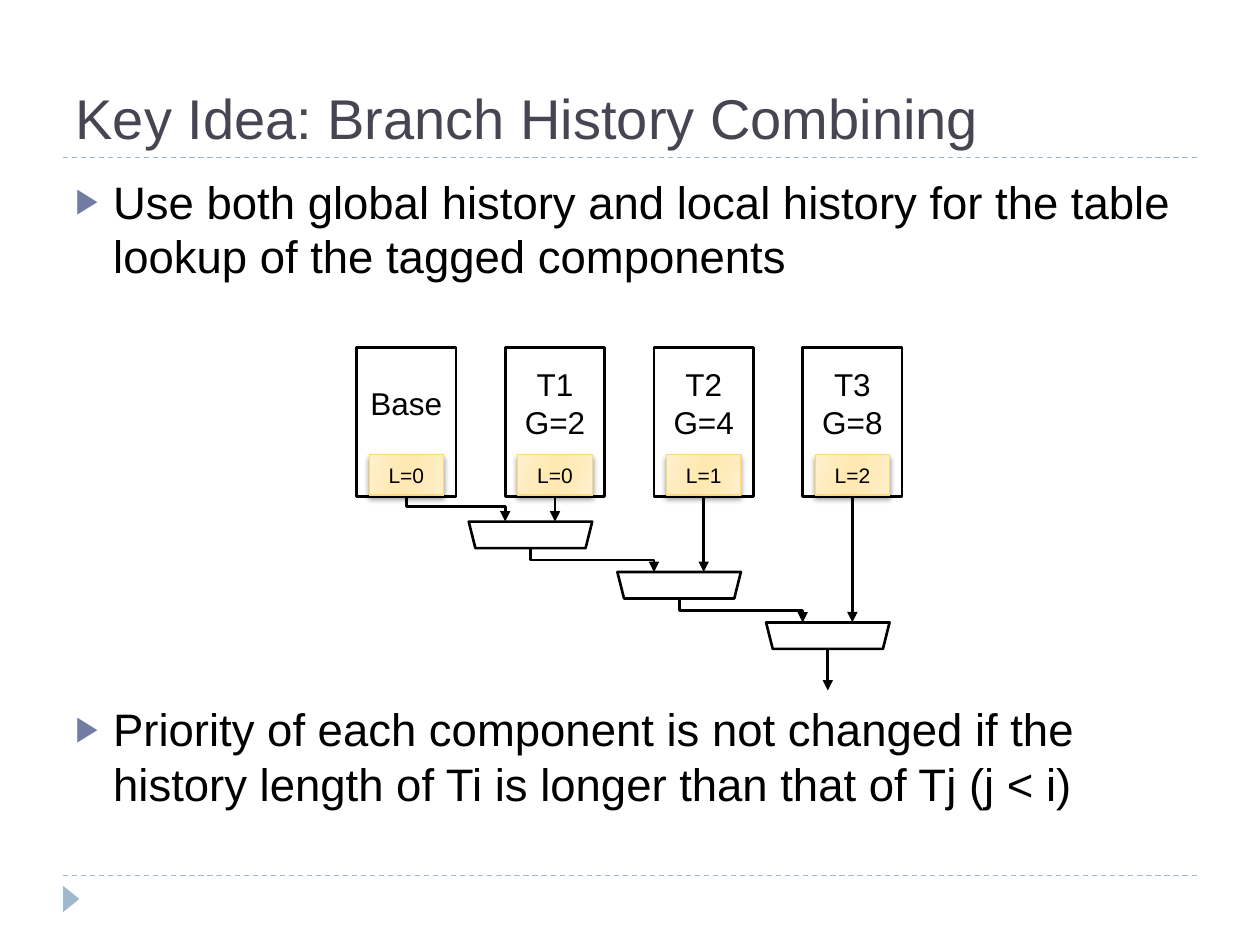
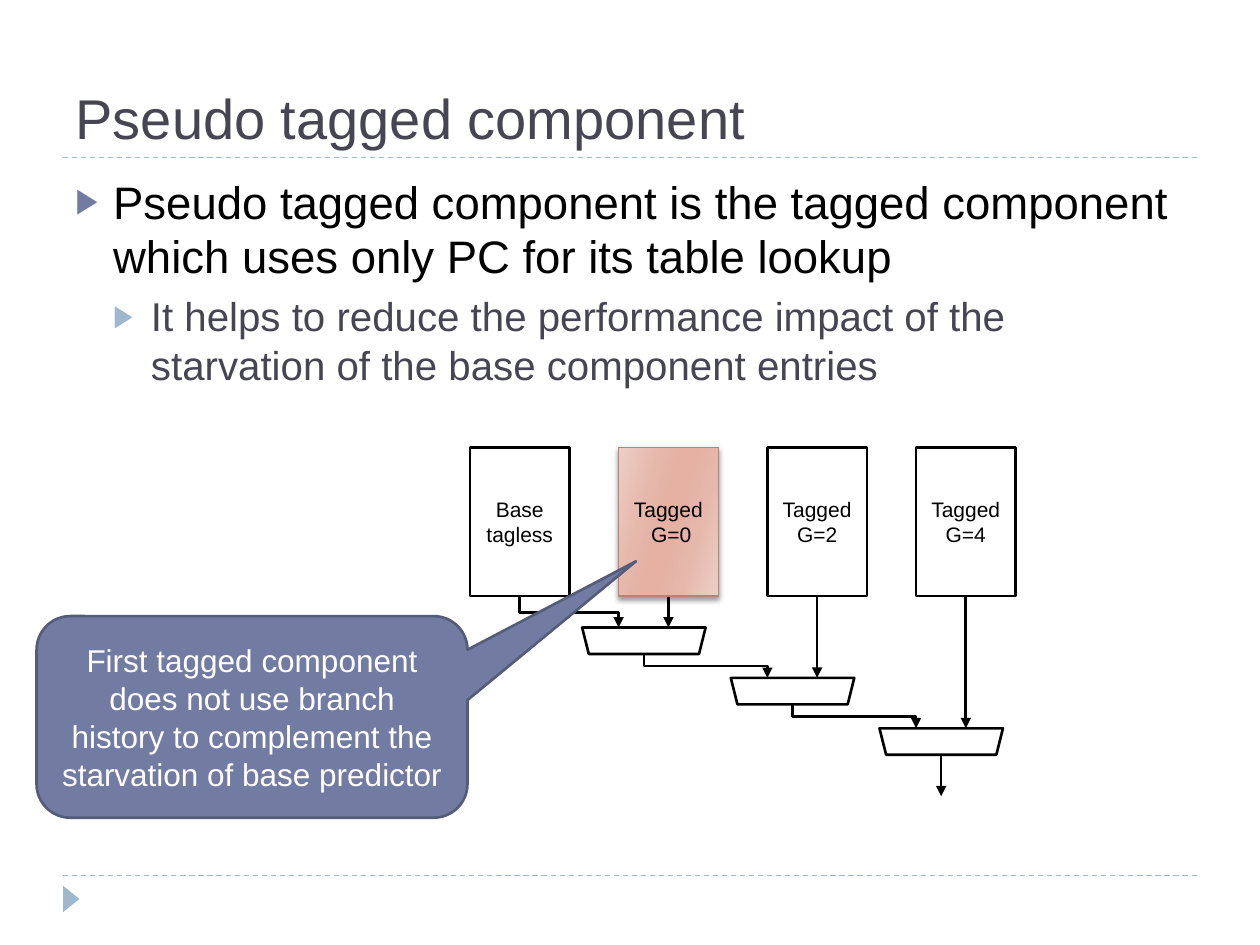
from pptx import Presentation
from pptx.dml.color import RGBColor
from pptx.enum import dml, shapes, text
from pptx.oxml import parse_xml
from pptx.oxml.ns import nsdecls, qn
from pptx.util import Inches, Pt

COLOURS = {
    "ink": "000000", "paper": "FFFFFF", "heading": "464653",
    "accent": "727CA3", "accent_edge": "545C79", "pale": "9FB8CD",
    "yellow_edge": "FADA7A", "red_edge": "B88472",
}
# Outer, middle and inner colours of a mirrored gradient
GRADIENTS = {
    "yellow": ("FFF0CF", "FFEBBA", "FFE9B3"),
    "red": ("ECCEC6", "E6B8AC", "E4B1A3"),
}
GRADIENT_STOPS = (0, 30, 45, 55, 73, 100)
FONT = "Arial"
# Per bullet level: size, text colour, bullet colour, space before
BULLET_LEVELS = (
    (26, "ink", "accent", 6),
    (23, "heading", "pale", 5),
)

TABLE_WIDTH, TABLE_HEIGHT, TABLE_PITCH = 0.79, 1.18, 1.18
MUX_WIDTH, MUX_HEIGHT, MUX_STEP, MUX_OVERHANG = 0.98, 0.21, 0.4, 0.29
FIRST_ARROW, LAST_ARROW = 0.24, 0.33
CHIP_WIDTH, CHIP_HEIGHT = 0.59, 0.32


def rgb(name):
    return RGBColor.from_string(COLOURS[name])


class Deck:
    """Holds the shared style and the slide being drawn."""

    def __init__(self):
        self.presentation = Presentation()
        self.presentation.slide_width = Inches(10)
        self.presentation.slide_height = Inches(7.5)
        self.slide = None

    def start_slide(self, title):
        self.slide = self.presentation.slides.add_slide(self.presentation.slide_layouts[5])
        for y in (6.95, 1.25):
            rule = self.line((0.5, y), (9.5, y), "pale", 0.75)
            rule.line.dash_style = dml.MSO_LINE.DASH
        marker = self.shape(shapes.MSO_SHAPE.ISOSCELES_TRIANGLE, (0.46, 7.07, 0.21, 0.13),
                            fill="pale", edge=None)
        marker.rotation = 90
        heading = self.slide.shapes.title
        heading.left, heading.top, heading.width, heading.height = map(Inches, (0.5, 0.17, 9, 1.08))
        frame = heading.text_frame
        frame.text = title
        frame.auto_size = text.MSO_AUTO_SIZE.NONE
        frame.vertical_anchor = text.MSO_ANCHOR.BOTTOM
        self.style(frame.paragraphs[0], 32, "heading", text.PP_ALIGN.LEFT)

    def style(self, paragraph, size, colour, alignment):
        paragraph.alignment = alignment
        for run in paragraph.runs:
            run.font.name = FONT
            run.font.size = Pt(size)
            run.font.color.rgb = rgb(colour)

    def bullets(self, items):
        """Items are (level, wording, extra space before in points)."""
        box = self.slide.shapes.add_textbox(*map(Inches, (0.5, 1.33, 9, 5.4)))
        frame = box.text_frame
        frame.word_wrap = True
        for index, (level, wording, gap) in enumerate(items):
            paragraph = frame.paragraphs[0] if index == 0 else frame.add_paragraph()
            paragraph.text = wording
            size, colour, bullet_colour, space = BULLET_LEVELS[level]
            self.style(paragraph, size, colour, text.PP_ALIGN.LEFT)
            paragraph.level = level
            paragraph.space_before = Pt(space + gap)
            properties = paragraph._p.get_or_add_pPr()
            properties.set("marL", str(Inches(0.3 * (level + 1))))
            properties.set("indent", str(-Inches(0.3)))
            for bullet in (
                f'<a:buClr {nsdecls("a")}><a:srgbClr val="{COLOURS[bullet_colour]}"/></a:buClr>',
                f'<a:buSzPct {nsdecls("a")} val="76000"/>',
                f'<a:buFont {nsdecls("a")} typeface="{FONT}"/>',
                f'<a:buChar {nsdecls("a")} char="▶"/>',
            ):
                properties.append(parse_xml(bullet))

    def shape(self, kind, place, fill="paper", edge="ink", edge_width=1.5):
        shape = self.slide.shapes.add_shape(kind, *map(Inches, place))
        shape.shadow.inherit = False
        if fill in GRADIENTS:
            self.shade(shape, GRADIENTS[fill])
        else:
            shape.fill.solid()
            shape.fill.fore_color.rgb = rgb(fill)
        if edge:
            shape.line.color.rgb = rgb(edge)
            shape.line.width = Pt(edge_width)
        else:
            shape.line.fill.background()
        return shape

    def shade(self, shape, tones):
        """Give a shape a mirrored gradient and a soft shadow below."""
        stops = "".join(
            f'<a:gs pos="{stop * 1000}"><a:srgbClr val="{tone}"/></a:gs>'
            for stop, tone in zip(GRADIENT_STOPS, tones + tones[::-1]))
        properties = shape.element.spPr
        properties.find(qn("a:prstGeom")).addnext(parse_xml(
            f'<a:gradFill {nsdecls("a")} rotWithShape="1"><a:gsLst>{stops}</a:gsLst>'
            f'<a:lin ang="{16 * 60000}" scaled="0"/></a:gradFill>'))
        properties.find(qn("a:effectLst")).append(parse_xml(
            f'<a:outerShdw {nsdecls("a")} blurRad="{Pt(3)}" dist="{Pt(2)}" dir="5400000" '
            f'rotWithShape="0"><a:srgbClr val="{COLOURS["ink"]}"><a:alpha val="40000"/>'
            '</a:srgbClr></a:outerShdw>'))

    def label(self, shape, wording, size, colour="ink", side=0.05, bottom=0.05):
        frame = shape.text_frame
        frame.word_wrap = True
        frame.margin_left = frame.margin_right = Inches(side)
        frame.margin_bottom = Inches(bottom)
        frame.vertical_anchor = text.MSO_ANCHOR.MIDDLE
        frame.text = wording
        for paragraph in frame.paragraphs:
            self.style(paragraph, size, colour, text.PP_ALIGN.CENTER)

    def line(self, start, end, colour="ink", width=1.5, kind=shapes.MSO_CONNECTOR.STRAIGHT):
        connector = self.slide.shapes.add_connector(kind, *map(Inches, start + end))
        connector.line.color.rgb = rgb(colour)
        connector.line.width = Pt(width)
        connector.element.spPr.append(parse_xml(f'<a:effectLst {nsdecls("a")}/>'))
        return connector

    def arrow(self, start, end):
        """Draw an arrow down, with a bend halfway where the ends are not in line."""
        if start[0] == end[0]:
            connector = self.line(start, end)
        else:
            across, down = end[0] - start[0], end[1] - start[1]
            left = (start[0] + end[0] - down) / 2
            top = (start[1] + end[1] - across) / 2
            connector = self.line((left, top), (left + down, top + across),
                                  kind=shapes.MSO_CONNECTOR.ELBOW)
            frame = connector.element.spPr.find(qn("a:xfrm"))
            frame.set("rot", str(270 * 60000))
            frame.set("flipH", "1")
        connector.line._get_or_add_ln().append(
            parse_xml(f'<a:tailEnd {nsdecls("a")} type="triangle"/>'))

    def predictor(self, left, top, mux_top, labels, size, bottom=0.05, chips=(), highlight=None):
        """Draw the row of tables and the chain of multiplexers that picks one."""
        lefts = [left + TABLE_PITCH * column for column in range(len(labels))]
        for column, (x, wording) in enumerate(zip(lefts, labels)):
            look = ("red", "red_edge", 0.75) if column == highlight else ()
            table = self.shape(shapes.MSO_SHAPE.RECTANGLE,
                               (x, top, TABLE_WIDTH, TABLE_HEIGHT), *look)
            self.label(table, wording, size, bottom=bottom)

        outlet = mux_top - FIRST_ARROW
        source = (left + TABLE_WIDTH / 2, outlet)
        for step, x in enumerate(lefts[1:]):
            y = mux_top + MUX_STEP * step
            mux_left = x - MUX_OVERHANG
            mux = self.shape(shapes.MSO_SHAPE.TRAPEZOID, (mux_left, y, MUX_WIDTH, MUX_HEIGHT))
            mux.rotation = 180
            self.arrow(source, (x, y))
            middle = x + TABLE_WIDTH / 2
            self.arrow((middle, outlet), (middle, y))
            source = (mux_left + MUX_WIDTH / 2, y + MUX_HEIGHT)
        self.arrow(source, (source[0], source[1] + LAST_ARROW))

        for x, wording in zip(lefts, chips):
            chip = self.shape(
                shapes.MSO_SHAPE.RECTANGLE,
                (x + (TABLE_WIDTH - CHIP_WIDTH) / 2, top + 0.85, CHIP_WIDTH, CHIP_HEIGHT),
                "yellow", "yellow_edge", 0.75)
            self.label(chip, wording, 12)

    def callout(self, place, wording, adjustments):
        bubble = self.shape(shapes.MSO_SHAPE.ROUNDED_RECTANGULAR_CALLOUT, place,
                            "accent", "accent_edge")
        for index, value in enumerate(adjustments):
            bubble.adjustments[index] = value
        self.label(bubble, wording, 18, "paper", side=0.1)


def main():
    deck = Deck()

    deck.start_slide("Key Idea: Branch History Combining")
    deck.bullets([
        (0, "Use both global history and local history for the table lookup "
            "of the tagged components", 0),
        (0, "Priority of each component is not changed if the history length of Ti "
            "is longer than that of Tj (j < i)", 233),
    ])
    deck.predictor(2.83, 2.76, 4.14, ["Base", "T1\nG=2", "T2\nG=4", "T3\nG=8"], 18,
                   bottom=0.35, chips=["L=0", "L=0", "L=1", "L=2"])

    deck.start_slide("Pseudo tagged component")
    deck.bullets([
        (0, "Pseudo tagged component is the tagged component which uses only PC "
            "for its table lookup", 0),
        (1, "It helps to reduce the performance impact of the starvation "
            "of the base component entries", 0),
    ])
    deck.predictor(3.73, 3.55, 4.98,
                   ["Base\ntagless", "Tagged\n G=0", "Tagged\nG=2", "Tagged\nG=4"], 12,
                   highlight=1)
    deck.callout((0.29, 4.89, 3.42, 1.6),
                 "First tagged component does not use branch history to complement "
                 "the starvation of base predictor", (0.891, -0.772, 0.167))

    deck.presentation.save("out.pptx")


if __name__ == "__main__":
    main()
